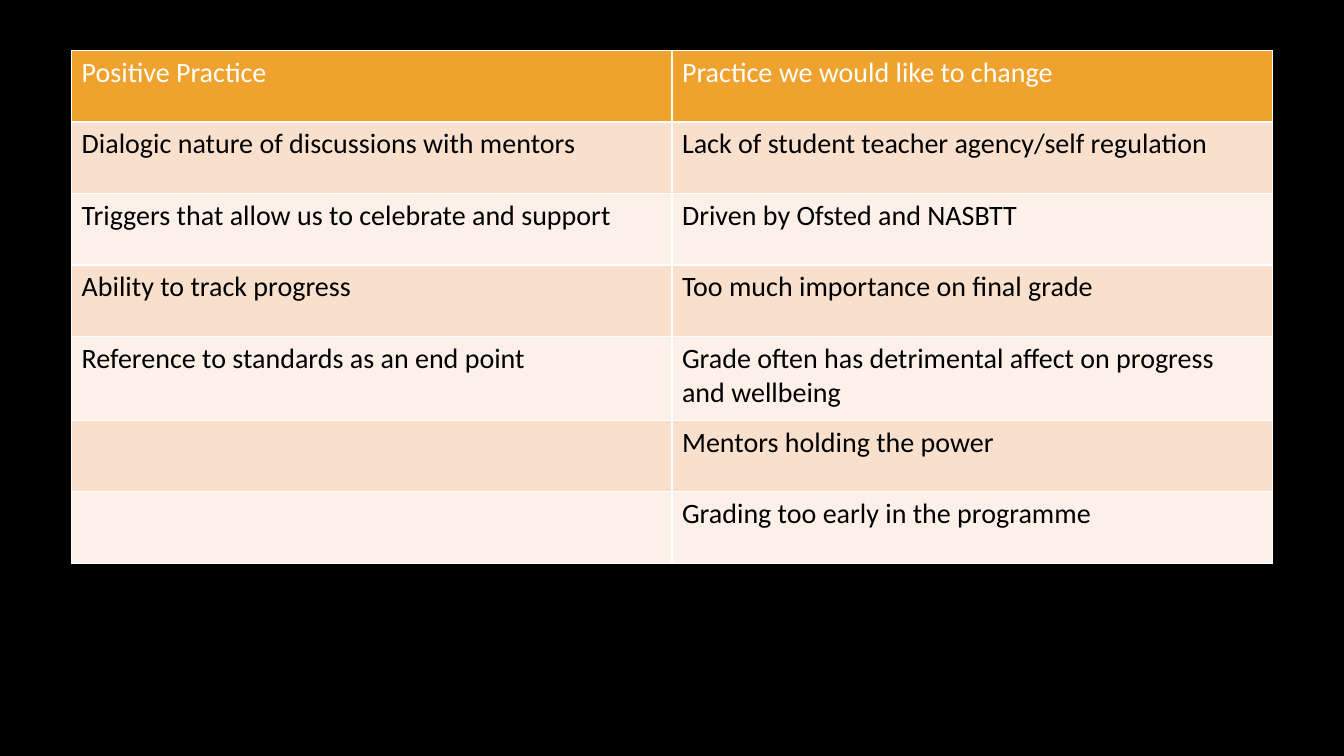
from pptx import Presentation
from pptx.dml.color import RGBColor
from pptx.util import Inches, Pt

WIDE, HIGH = Inches(13.33), Inches(7.5)
BLANK = 6
ROW, TALL = Inches(0.71), Inches(0.83)
HEAD, BANDS = "F0A22E", ("FCF0E8", "F9E0CD")
ROWS = (
    ("Positive Practice", "Practice we would like to change"),
    ("Dialogic nature of discussions with mentors",
     "Lack of student teacher agency/self regulation"),
    ("Triggers that allow us to celebrate and support", "Driven by Ofsted and NASBTT"),
    ("Ability to track progress", "Too much importance on final grade"),
    ("Reference to standards as an end point",
     "Grade often has detrimental affect on progress and wellbeing"),
    ("", "Mentors holding the power"),
    ("", "Grading too early in the programme"),
)
LONG = 4


def paint(fill, color):
    fill.solid()
    fill.fore_color.rgb = RGBColor.from_string(color)


def write(cell, text, color):
    cell.text = text
    for run in cell.text_frame.paragraphs[0].runs:
        font = run.font
        font.name, font.size, font.bold = "Calibri", Pt(20), False
        font.color.rgb = RGBColor.from_string(color)


def compare(slide, left, top, width, height):
    frame = slide.shapes.add_table(len(ROWS), 2, left, top, width, height)
    table = frame.table
    for i, texts in enumerate(ROWS):
        table.rows[i].height = TALL if i == LONG else ROW
        for j, text in enumerate(texts):
            cell = table.cell(i, j)
            paint(cell.fill, BANDS[i % 2] if i else HEAD)
            write(cell, text, "000000" if i else "FFFFFF")
    frame.height = height


def main():
    deck = Presentation()
    deck.slide_width, deck.slide_height = WIDE, HIGH
    slide = deck.slides.add_slide(deck.slide_layouts[BLANK])
    paint(slide.background.fill, "000000")
    compare(slide, Inches(0.71), Inches(0.5), Inches(11.91), Inches(5.14))
    deck.save("out.pptx")


if __name__ == "__main__":
    main()
